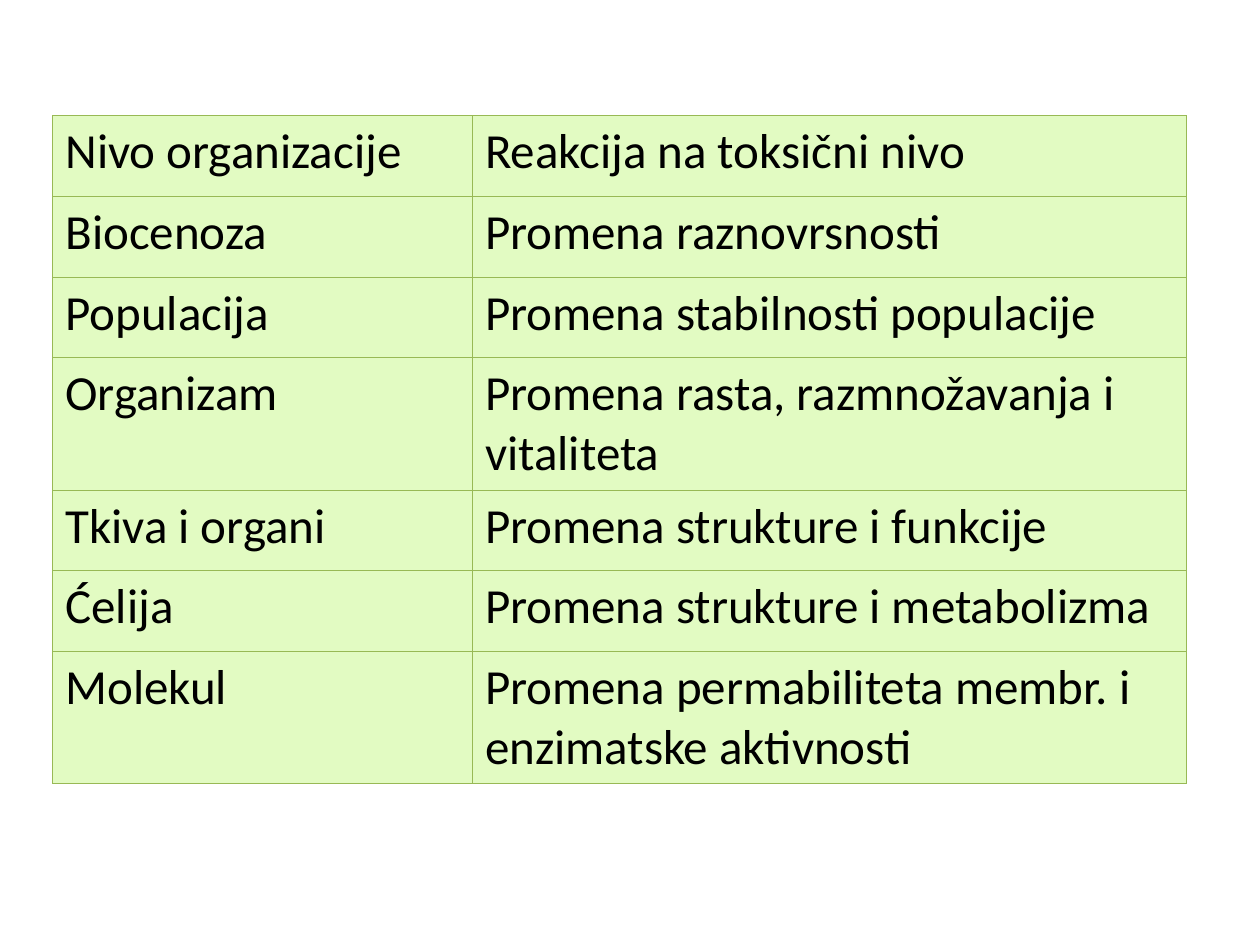
from dataclasses import dataclass

from lxml.etree import SubElement
from pptx import Presentation
from pptx.dml.color import RGBColor
from pptx.oxml.ns import qn
from pptx.util import Inches, Pt


@dataclass(frozen=True)
class Theme:
    fill: str = "E2FBC2"
    line: str = "98B955"
    ink: str = "000000"
    face: str = "Calibri"
    size: int = 28
    rule: float = 0.75


THEME = Theme()
FONT = {"name": THEME.face, "size": Pt(THEME.size), "bold": False}
FLAGS = {"first_row": False, "horz_banding": False}

# Level of organisation, its reaction, lines of text in the row
ROWS = [
    ("Nivo organizacije", "Reakcija na toksični nivo", 1),
    ("Biocenoza", "Promena raznovrsnosti", 1),
    ("Populacija", "Promena stabilnosti populacije", 1),
    ("Organizam", "Promena rasta, razmnožavanja i vitaliteta", 2),
    ("Tkiva i organi", "Promena strukture i funkcije", 1),
    ("Ćelija", "Promena strukture i metabolizma", 1),
    ("Molekul", "Promena permabiliteta membr. i enzimatske aktivnosti", 2),
]
HEIGHTS = {1: Inches(0.64), 2: Inches(1.05)}
SHARES = (0.37, 0.63)


def style(item, values):
    for key, value in values.items():
        setattr(item, key, value)


def border(cell):
    props = cell._tc.get_or_add_tcPr()
    for side in ("a:lnL", "a:lnR", "a:lnT", "a:lnB"):
        line = SubElement(props, qn(side), w=str(Pt(THEME.rule)))
        solid = SubElement(line, qn("a:solidFill"))
        SubElement(solid, qn("a:srgbClr"), val=THEME.line)


def write(cell, text):
    # Borders come before the fill in the cell properties
    border(cell)
    cell.fill.solid()
    cell.fill.fore_color.rgb = RGBColor.from_string(THEME.fill)
    cell.text = text
    font = cell.text_frame.paragraphs[0].runs[0].font
    style(font, FONT)
    font.color.rgb = RGBColor.from_string(THEME.ink)


def levels(slide, left, top, width):
    height = sum(HEIGHTS[lines] for *_, lines in ROWS)
    frame = slide.shapes.add_table(
        len(ROWS), len(SHARES), left, top, width, height)
    table = frame.table
    style(table, FLAGS)
    for column, share in zip(table.columns, SHARES):
        column.width = int(width * share)
    for row, (*texts, lines) in zip(table.rows, ROWS):
        row.height = HEIGHTS[lines]
        for cell, text in zip(row.cells, texts):
            write(cell, text)


def main():
    deck = Presentation()
    style(deck, {"slide_width": Inches(10), "slide_height": Inches(7.5)})
    slide = deck.slides.add_slide(deck.slide_layouts[6])
    # Table of reactions by level
    levels(slide, Inches(0.42), Inches(0.92), Inches(9))
    deck.save("out.pptx")


if __name__ == "__main__":
    main()
